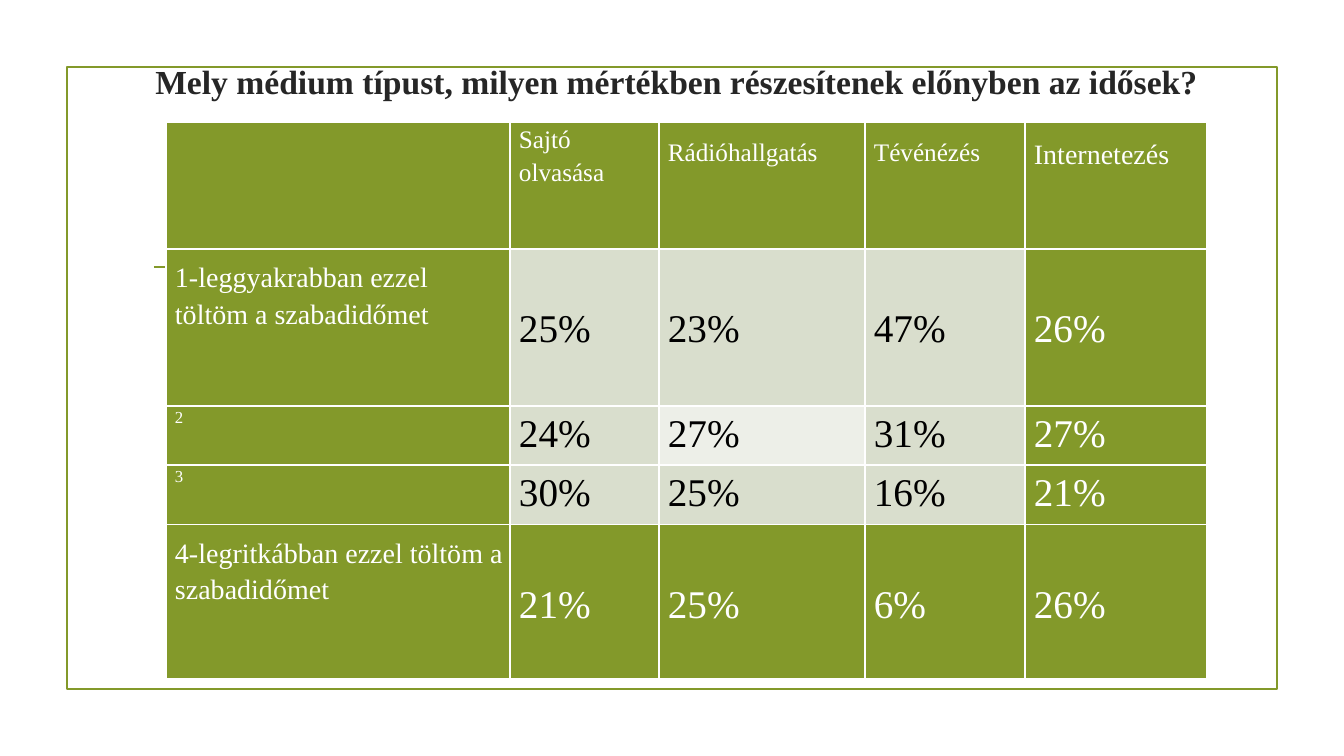
from lxml import etree
from pptx import Presentation
from pptx.dml.color import RGBColor
from pptx.enum.shapes import MSO_CONNECTOR, MSO_SHAPE
from pptx.enum.text import MSO_ANCHOR, PP_ALIGN
from pptx.oxml.ns import qn
from pptx.util import Pt

PX = 9071
STRAIGHT = MSO_CONNECTOR.STRAIGHT
RECTANGLE = MSO_SHAPE.RECTANGLE
MIDDLE = MSO_ANCHOR.MIDDLE
CENTER = PP_ALIGN.CENTER

WHITE = RGBColor(0xFF, 0xFF, 0xFF)
BLACK = RGBColor(0, 0, 0)
INK = RGBColor(0x26, 0x26, 0x26)
GREEN = RGBColor(0x83, 0x99, 0x2A)
SAGE = RGBColor(0xD9, 0xDE, 0xCD)
PALE = RGBColor(0xED, 0xEF, 0xE8)

COLUMNS = [344, 149, 206, 160, 182]
ROWS = [127, 157, 59, 60, 154]
HEADERS = [("", 18, 0), ("Sajtó\nolvasása", 18, 0), ("Rádióhallgatás", 18, 13),
           ("Tévénézés", 18, 13), ("Internetezés", 20, 13)]
ANSWERS = [
    ("1-leggyakrabban ezzel\ntöltöm a szabadidőmet", 20, 9, 52,
     ["25%", "23%", "47%", "26%"], [SAGE, SAGE, SAGE, GREEN]),
    ("2", 12, 0, 0, ["24%", "27%", "31%", "27%"], [SAGE, PALE, SAGE, GREEN]),
    ("3", 12, 0, 0, ["30%", "25%", "16%", "21%"], [SAGE, SAGE, SAGE, GREEN]),
    ("4-legritkábban ezzel töltöm a szabadidőmet", 20, 9, 52,
     ["21%", "25%", "6%", "26%"], [GREEN] * 4),
]


class Deck:
    font = "Times New Roman"
    line_width = Pt(1.25)

    def __init__(self, width, height):
        self.prs = Presentation()
        self.prs.slide_width, self.prs.slide_height = width * PX, height * PX
        self.s = self.prs.slides.add_slide(self.prs.slide_layouts[5])

    def title(self, text, x, y, w, h):
        sp = self.s.shapes.title
        sp.left, sp.top, sp.width, sp.height = (v * PX for v in (x, y, w, h))
        tf = sp.text_frame
        tf.text = text
        tf.word_wrap = True
        tf.vertical_anchor = MIDDLE
        p = tf.paragraphs[0]
        p.alignment = CENTER
        self.style(p, 24, INK)
        p.font.bold = True

    def style(self, p, size, color):
        p.font.name = self.font
        p.font.size = Pt(size)
        p.font.color.rgb = color

    def frame(self, x, y, w, h):
        sp = self.s.shapes.add_shape(RECTANGLE, x * PX, y * PX, w * PX, h * PX)
        sp.shadow.inherit = False
        sp.fill.background()
        sp.line.color.rgb = GREEN
        sp.line.width = self.line_width

    def rule(self, x1, x2, y):
        line = self.s.shapes.add_connector(STRAIGHT, x1 * PX, y * PX, x2 * PX, y * PX)
        line.line.color.rgb = GREEN
        line.line.width = self.line_width
        etree.SubElement(line._element.spPr, qn("a:effectLst"))

    def table(self, x, y, columns, rows):
        shape = self.s.shapes.add_table(len(rows), len(columns), x * PX, y * PX,
                                        sum(columns) * PX, sum(rows) * PX)
        table = shape.table
        table.first_row = table.horz_banding = False
        for column, width in zip(table.columns, columns):
            column.width = width * PX
        for row, height in zip(table.rows, rows):
            row.height = height * PX
        return table

    def cell(self, cell, text, size, top, fill):
        cell.margin_left, cell.margin_top = 9 * PX, top * PX
        cell.margin_right = cell.margin_bottom = 0
        tf = cell.text_frame
        tf.text = text
        for i, p in enumerate(tf.paragraphs):
            p.line_spacing = 1.15
            if i:
                p.space_before = Pt(0.5)
            self.style(p, size, WHITE if fill == GREEN else BLACK)
        self.borders(cell)
        cell.fill.solid()
        cell.fill.fore_color.rgb = fill

    def borders(self, cell):
        tcPr = cell._tc.get_or_add_tcPr()
        for side in ("a:lnL", "a:lnR", "a:lnT", "a:lnB"):
            ln = etree.SubElement(tcPr, qn(side), w=str(Pt(1)))
            fill = etree.SubElement(ln, qn("a:solidFill"))
            etree.SubElement(fill, qn("a:srgbClr"), val=str(WHITE))


def main():
    deck = Deck(1344, 756)
    deck.frame(67, 67, 1210, 622)
    deck.rule(154, 1190, 267)
    deck.title("Mely médium típust, milyen mértékben részesítenek előnyben az idősek?",
               97, 40, 1159, 82)
    table = deck.table(166, 122, COLUMNS, ROWS)
    for c, (text, size, top) in enumerate(HEADERS):
        deck.cell(table.cell(0, c), text, size, top, GREEN)
    for r, (label, size, top, value_top, values, fills) in enumerate(ANSWERS, 1):
        deck.cell(table.cell(r, 0), label, size, top, GREEN)
        for c, (value, fill) in enumerate(zip(values, fills), 1):
            deck.cell(table.cell(r, c), value, 28, value_top, fill)
    deck.prs.save("out.pptx")


if __name__ == "__main__":
    main()
